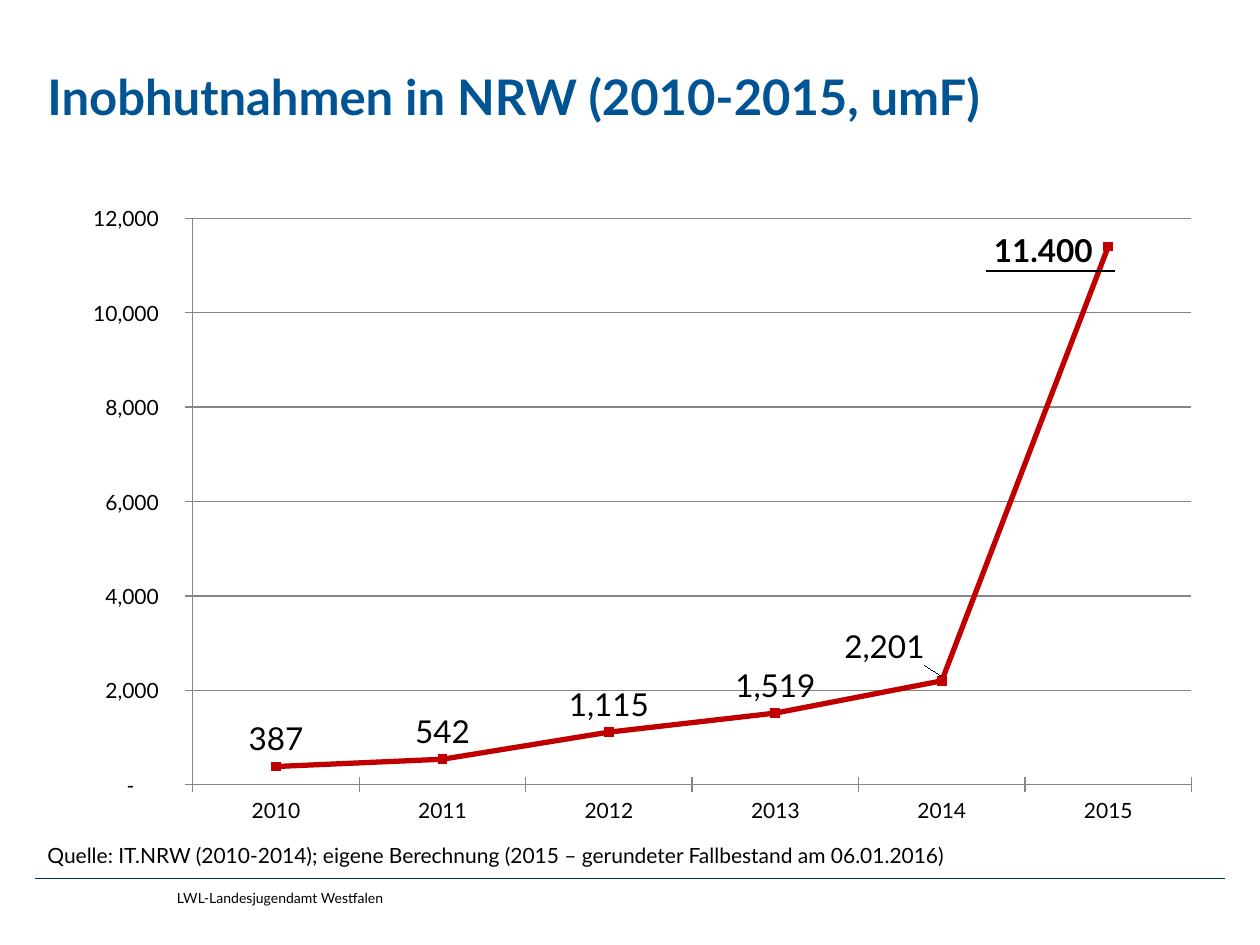
from dataclasses import dataclass

from lxml.etree import SubElement
from pptx import Presentation
from pptx.chart.data import CategoryChartData
from pptx.dml.color import RGBColor
from pptx.enum.chart import XL_CHART_TYPE, XL_LABEL_POSITION, XL_MARKER_STYLE, XL_TICK_MARK
from pptx.enum.shapes import MSO_CONNECTOR
from pptx.oxml import parse_xml
from pptx.oxml.ns import nsdecls, qn
from pptx.util import Pt


@dataclass(frozen=True)
class Theme:
    """Colours, font and type sizes of the slide."""
    font: str = "Lato"
    ink: RGBColor = RGBColor(0x00, 0x00, 0x00)
    heading: RGBColor = RGBColor(0x00, 0x54, 0x93)
    rule: RGBColor = RGBColor(0x00, 0x32, 0x5F)
    curve: RGBColor = RGBColor(0xC0, 0x00, 0x00)
    grid: RGBColor = RGBColor(0x86, 0x86, 0x86)
    heading_size: float = 28
    label_size: float = 18
    body_size: float = 12
    footer_size: float = 8


THEME = Theme()
CASES = {"2010": 387, "2011": 542, "2012": 1115, "2013": 1519, "2014": 2201, "2015": 11400}
AXIS_FORMAT = r'_-* #,##0\ _€_-;\-* #,##0\ _€_-;_-* "-"??\ _€_-;_-@_-'


def format_font(font, size, color=THEME.ink, bold=False, underline=None):
    """Apply the theme font with the given format."""
    font.name = THEME.font
    font.size = Pt(size)
    font.bold = bold
    font.underline = underline
    font.color.rgb = color


def add_text(slide, box, text, **style):
    """Place one line of text in a box."""
    frame = slide.shapes.add_textbox(*map(Pt, box)).text_frame
    frame.word_wrap = True
    run = frame.paragraphs[0].add_run()
    run.text = text
    format_font(run.font, **style)


def manual_layout(target="", **values):
    """Return a chart layout element from fractions of the chart."""
    inner = f'<c:layoutTarget val="{target}"/><c:xMode val="edge"/><c:yMode val="edge"/>' if target else ""
    inner += "".join(f'<c:{key} val="{value}"/>' for key, value in values.items())
    return parse_xml(f'<c:layout {nsdecls("c")}><c:manualLayout>{inner}</c:manualLayout></c:layout>')


def style_axis(axis):
    """Give an axis its line, ticks and type."""
    axis.major_tick_mark = XL_TICK_MARK.CROSS
    axis.minor_tick_mark = XL_TICK_MARK.NONE
    axis.format.line.color.rgb = THEME.grid
    axis.format.line.width = Pt(0.75)
    format_font(axis.tick_labels.font, THEME.body_size)


def move_label(series, index, x, y):
    """Shift the label of one point by fractions of the chart."""
    label_index = series._element.xpath(f"c:dLbls/c:dLbl/c:idx[@val='{index}']")[0]
    for old in label_index.getparent().findall(qn("c:layout")):
        label_index.getparent().remove(old)
    label_index.addnext(manual_layout(x=x, y=y))


def style_series(series):
    """Format the curve, its markers and its labels."""
    series.smooth = False
    series.format.line.color.rgb = THEME.curve
    series.format.line.width = Pt(3)
    series.marker.style = XL_MARKER_STYLE.SQUARE
    series.marker.size = 5
    series.marker.format.fill.solid()
    series.marker.format.fill.fore_color.rgb = THEME.curve
    series.marker.format.line.color.rgb = THEME.curve

    labels = series.data_labels
    labels.show_value = True
    labels.number_format = "#,##0"
    labels.number_format_is_linked = False
    labels.position = XL_LABEL_POSITION.ABOVE
    format_font(labels.font, THEME.label_size)

    label_2014 = series.points[4].data_label
    label_2014.position = XL_LABEL_POSITION.ABOVE
    format_font(label_2014.font, THEME.label_size)
    move_label(series, 4, -0.05, -0.01)

    label_2015 = series.points[5].data_label
    run = label_2015.text_frame.paragraphs[0].add_run()
    run.text = " 11.400   "
    format_font(run.font, THEME.label_size, bold=True, underline=True)
    label_2015.position = XL_LABEL_POSITION.ABOVE
    move_label(series, 5, -0.05, 0.05)


def add_case_chart(slide, box):
    """Draw the yearly cases as a line chart in a box."""
    cases = CategoryChartData(number_format="#,##0")
    cases.categories = list(CASES)
    cases.add_series("Inobhutnahmen", CASES.values())
    chart = slide.shapes.add_chart(XL_CHART_TYPE.LINE_MARKERS, *map(Pt, box), cases).chart
    format_font(chart.font, THEME.label_size)
    chart.has_legend = False
    chart.has_title = False
    chart.plots[0].vary_by_categories = False

    style_axis(chart.category_axis)
    values = chart.value_axis
    style_axis(values)
    values.minimum_scale, values.maximum_scale, values.major_unit = 0, 12000, 2000
    values.tick_labels.number_format = AXIS_FORMAT
    values.tick_labels.number_format_is_linked = False
    values.has_major_gridlines = True
    values.major_gridlines.format.line.color.rgb = THEME.grid
    values.major_gridlines.format.line.width = Pt(0.75)
    style_series(chart.plots[0].series[0])

    plot_area = chart._chartSpace.xpath("c:chart/c:plotArea")[0]
    for old in plot_area.findall(qn("c:layout")):
        plot_area.remove(old)
    plot_area.insert(0, manual_layout("inner", x=0.11, y=0.04, w=0.87, h=0.88))


def add_footer(slide, box):
    """Draw the source, the rule and the sender at the foot."""
    left, top, width, height = box
    rule_top = top + 23.75
    rule = slide.shapes.add_connector(
        MSO_CONNECTOR.STRAIGHT, Pt(left), Pt(rule_top), Pt(left + width), Pt(rule_top))
    rule.line.color.rgb = THEME.rule
    rule.line.width = Pt(0.5)
    SubElement(rule._element.spPr, qn("a:effectLst"))
    add_text(slide, (left, top, width, 21.6),
             "Quelle: IT.NRW (2010-2014); eigene Berechnung (2015 – gerundeter Fallbestand am 06.01.2016)",
             size=THEME.body_size)
    add_text(slide, (left + 74, top + 26.6, 522, height - 26.6),
             "LWL-Landesjugendamt Westfalen", size=THEME.footer_size)


def main():
    """Build and save the slide."""
    deck = Presentation()
    deck.slide_width, deck.slide_height = Pt(720), Pt(540)
    slide = deck.slides.add_slide(deck.slide_layouts[6])
    add_text(slide, (20, 34.5, 680, 73.5), "Inobhutnahmen in NRW (2010-2015, umF)",
             size=THEME.heading_size, color=THEME.heading, bold=True)
    add_case_chart(slide, (38, 110, 656, 368))
    add_footer(slide, (20, 478, 680, 38))
    deck.save("out.pptx")


if __name__ == "__main__":
    main()
